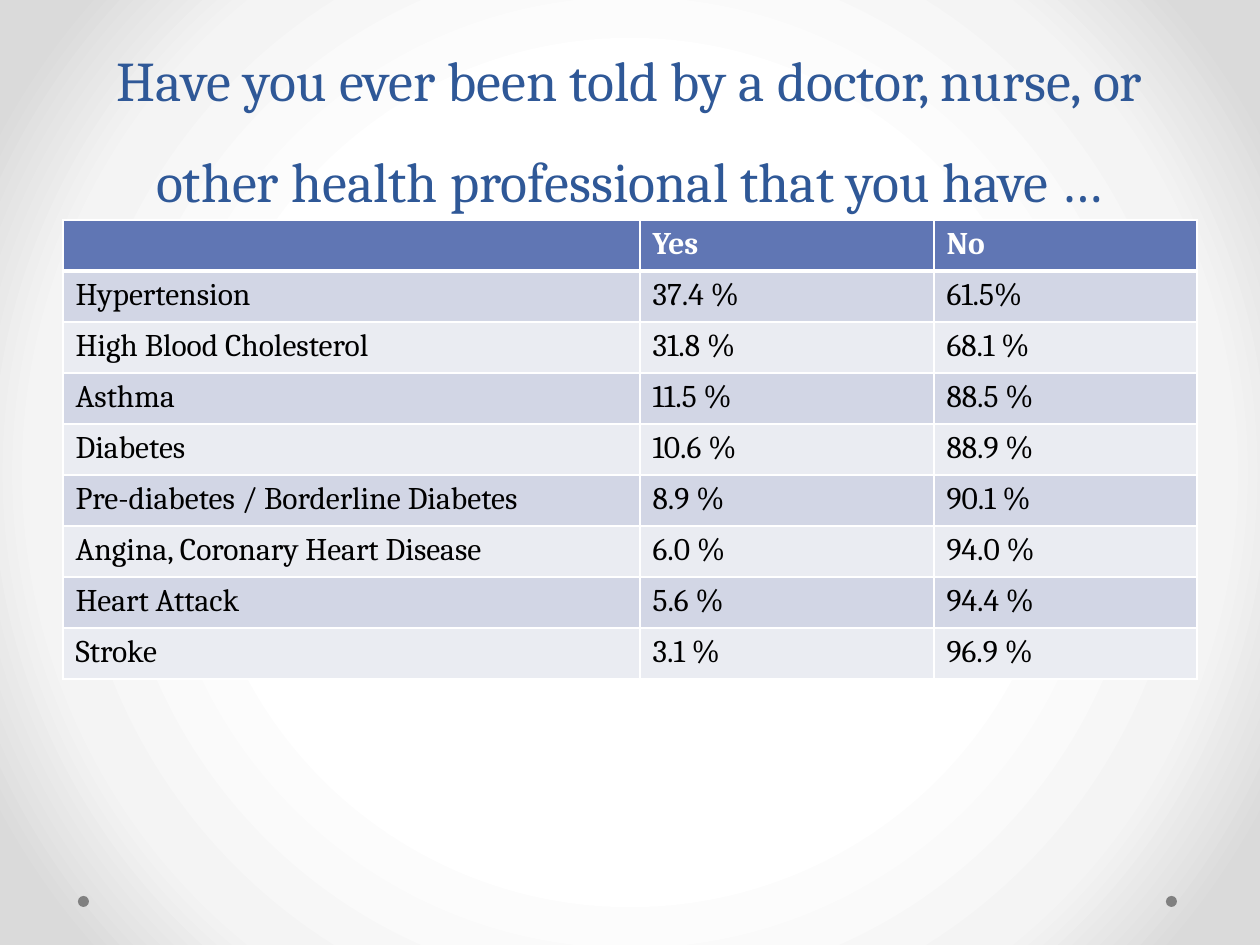
from pptx import Presentation
from pptx.dml.color import RGBColor
from pptx.enum.shapes import MSO_SHAPE
from pptx.enum.text import MSO_ANCHOR, PP_ALIGN
from pptx.oxml import parse_xml
from pptx.oxml.ns import nsdecls, qn
from pptx.util import Pt

PX = 914400 // 126
FONT = "Cambria"
COLORS = {
    "title": "2F5897", "header": "6076B4", "odd": "D2D6E5", "even": "EAECF2",
    "white": "FFFFFF", "black": "000000", "dot": "808080",
}
BACKGROUND_STOPS = [(50, "FFFFFF"), (76, "F4F4F4"), (92, "DADADA")]
TITLE = ("Have you ever been told by a doctor, nurse, or "
         "other health professional that you have …")
ROWS = [
    ("", "Yes", "No"),
    ("Hypertension", "37.4 %", "61.5%"),
    ("High Blood Cholesterol", "31.8 %", "68.1 %"),
    ("Asthma", "11.5 %", "88.5 %"),
    ("Diabetes", "10.6 %", "88.9 %"),
    ("Pre-diabetes / Borderline Diabetes", "8.9 %", "90.1 %"),
    ("Angina, Coronary Heart Disease", "6.0 %", "94.0 %"),
    ("Heart Attack", "5.6 %", "94.4 %"),
    ("Stroke", "3.1 %", "96.9 %"),
]
COLUMN_WIDTHS = [577, 294, 263]


def emu(*lengths):
    return [n * PX for n in lengths]


def rgb(name):
    return RGBColor.from_string(COLORS[name])


def write(tf, text, size=18, color="black", bold=False, align=None, spacing=None):
    p = tf.paragraphs[0]
    p.alignment = align
    p.line_spacing = spacing
    p.font.size = Pt(size)
    if text:
        r = p.add_run()
        r.text = text
        r.font.name = FONT
        r.font.size = Pt(size)
        r.font.bold = bold
        r.font.color.rgb = rgb(color)


def add_background(s):
    s.background.fill.gradient()
    old = s._element.find(".//" + qn("a:gradFill"))
    stops = "".join(
        f'<a:gs pos="{pos * 1000}"><a:srgbClr val="{color}"/></a:gs>'
        for pos, color in BACKGROUND_STOPS)
    new = parse_xml(
        f'<a:gradFill {nsdecls("a")} rotWithShape="1"><a:gsLst>{stops}</a:gsLst>'
        '<a:path path="circle"><a:fillToRect l="50000" t="50000" r="50000" b="50000"/>'
        '</a:path></a:gradFill>')
    old.getparent().replace(old, new)


def add_dots(s, x, y, w, h):
    for left in (x + w - h, x):
        sp = s.shapes.add_shape(MSO_SHAPE.OVAL, *emu(left, y, h, h))
        sp.shadow.inherit = False
        sp.fill.solid()
        sp.fill.fore_color.rgb = rgb("dot")
        sp.line.fill.background()


def add_title(s, x, y, w, h):
    tf = s.shapes.add_textbox(*emu(x, y, w, h)).text_frame
    tf.word_wrap = True
    tf.vertical_anchor = MSO_ANCHOR.BOTTOM
    write(tf, TITLE, size=32, color="title", align=PP_ALIGN.CENTER, spacing=Pt(58))


def set_borders(cell, top, bottom):
    tcPr = cell._tc.get_or_add_tcPr()
    for side, width in (("L", 1), ("R", 1), ("T", top), ("B", bottom)):
        tcPr.append(parse_xml(
            f'<a:ln{side} {nsdecls("a")} w="{Pt(width)}"><a:solidFill>'
            f'<a:srgbClr val="{COLORS["white"]}"/></a:solidFill></a:ln{side}>'))


def add_answers(s, x, y, w, h):
    table = s.shapes.add_table(len(ROWS), len(COLUMN_WIDTHS), *emu(x, y, w, h)).table
    for column, width in zip(table.columns, emu(*COLUMN_WIDTHS)):
        column.width = width
    for i, values in enumerate(ROWS):
        table.rows[i].height = h * PX // len(ROWS)
        header = i == 0
        fill = "header" if header else "odd" if i % 2 else "even"
        for j, text in enumerate(values):
            cell = table.cell(i, j)
            set_borders(cell, top=3 if i == 1 else 1, bottom=3 if header else 1)
            cell.fill.solid()
            cell.fill.fore_color.rgb = rgb(fill)
            write(cell.text_frame, text, color="white" if header else "black", bold=header)


def main():
    prs = Presentation()
    prs.slide_width, prs.slide_height = emu(1260, 945)
    s = prs.slides.add_slide(prs.slide_layouts[6])
    add_background(s)
    add_dots(s, 78, 896, 1099, 11)
    add_title(s, 63, 0, 1134, 220)
    add_answers(s, 63, 220, 1134, 459)
    prs.save("out.pptx")


if __name__ == "__main__":
    main()
